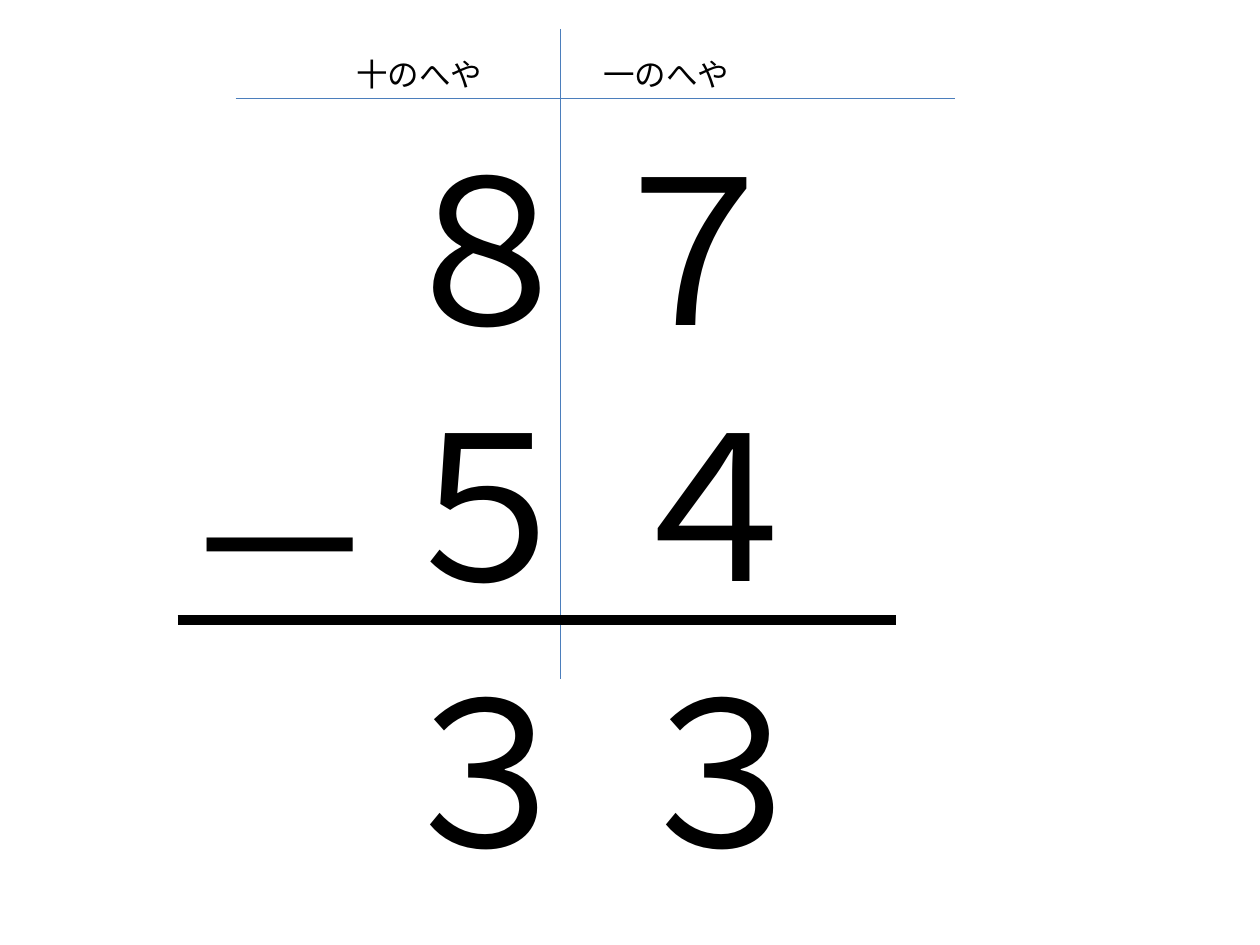
"""Build a slide that shows a two-digit subtraction in tens and ones columns."""
from dataclasses import dataclass

from lxml import etree
from pptx import Presentation
from pptx import util as u
from pptx.dml import color
from pptx.enum import shapes, text
from pptx.oxml import ns


@dataclass(frozen=True)
class Theme:
    """Colours, type sizes and line widths of the slide."""
    font: str = "Calibri"
    ink: str = "000000"
    guide: str = "4B7EBC"
    digit_size: float = 115
    label_size: float = 18
    guide_width: float = 0.75
    rule_width: float = 6


class Board:
    """Draws on one slide with lengths given in grid columns and rows."""

    def __init__(self, presentation, theme, columns=10, rows=7.5):
        self.theme = theme
        self.column = presentation.slide_width / columns
        self.row = presentation.slide_height / rows
        self.slide = presentation.slides.add_slide(presentation.slide_layouts[6])

    def place(self, column, row):
        """Turn a grid position into slide lengths."""
        return u.Emu(round(column * self.column)), u.Emu(round(row * self.row))

    def line(self, start, end, colour, width):
        """Draw a straight line between two grid positions."""
        connector = self.slide.shapes.add_connector(
            shapes.MSO_CONNECTOR.STRAIGHT, *self.place(*start), *self.place(*end))
        connector.line.color.rgb = color.RGBColor.from_string(colour)
        connector.line.width = u.Pt(width)
        etree.SubElement(connector._element.spPr, ns.qn("a:effectLst"))

    def text_box(self, words, position, extent, size, wrap=False, parent=None):
        """Set one run of text in a box."""
        owner = parent or self.slide
        box = owner.shapes.add_textbox(*self.place(*position), *self.place(*extent))
        frame = box.text_frame
        frame.word_wrap = wrap
        frame.auto_size = text.MSO_AUTO_SIZE.SHAPE_TO_FIT_TEXT
        run = frame.paragraphs[0].add_run()
        run.text = words
        run.font.size = u.Pt(size)
        run.font.name = self.theme.font
        run.font.color.rgb = color.RGBColor.from_string(self.theme.ink)

    def digit(self, words, column, row, width=1.3, **options):
        """Set one large digit or sign."""
        self.text_box(words, (column, row), (width, 2.04), self.theme.digit_size, **options)

    def label(self, words, column):
        """Set the heading of a place-value column."""
        self.text_box(words, (column, 0.39), (1.21, 0.4), self.theme.label_size)

    def group(self):
        """Add an empty group."""
        return self.slide.shapes.add_group_shape()


def main():
    """Build and save the slide."""
    presentation = Presentation()
    presentation.slide_width, presentation.slide_height = u.Inches(10), u.Inches(7.5)
    theme = Theme()
    board = Board(presentation, theme)
    tens, top, middle, bottom = 2.97, 0.94, 2.97, 5.08

    board.line((1.87, 0.78), (7.58, 0.78), theme.guide, theme.guide_width)
    board.line((4.45, 0.23), (4.45, 5.39), theme.guide, theme.guide_width)
    minuend = board.group()
    board.digit("８", tens, top, width=1.25, wrap=True, parent=minuend)
    board.digit("７", 4.61, top, parent=minuend)
    board.digit("－", 1.33, 3.28, width=1.81)
    board.digit("４", 4.77, middle)
    board.line((1.41, 4.92), (7.11, 4.92), theme.ink, theme.rule_width)
    board.label("十のへや", 2.73)
    board.label("一のへや", 4.69)
    board.digit("３", 4.84, bottom)
    board.digit("３", tens, bottom)
    board.digit("５", tens, middle)
    presentation.save("out.pptx")


if __name__ == "__main__":
    main()
